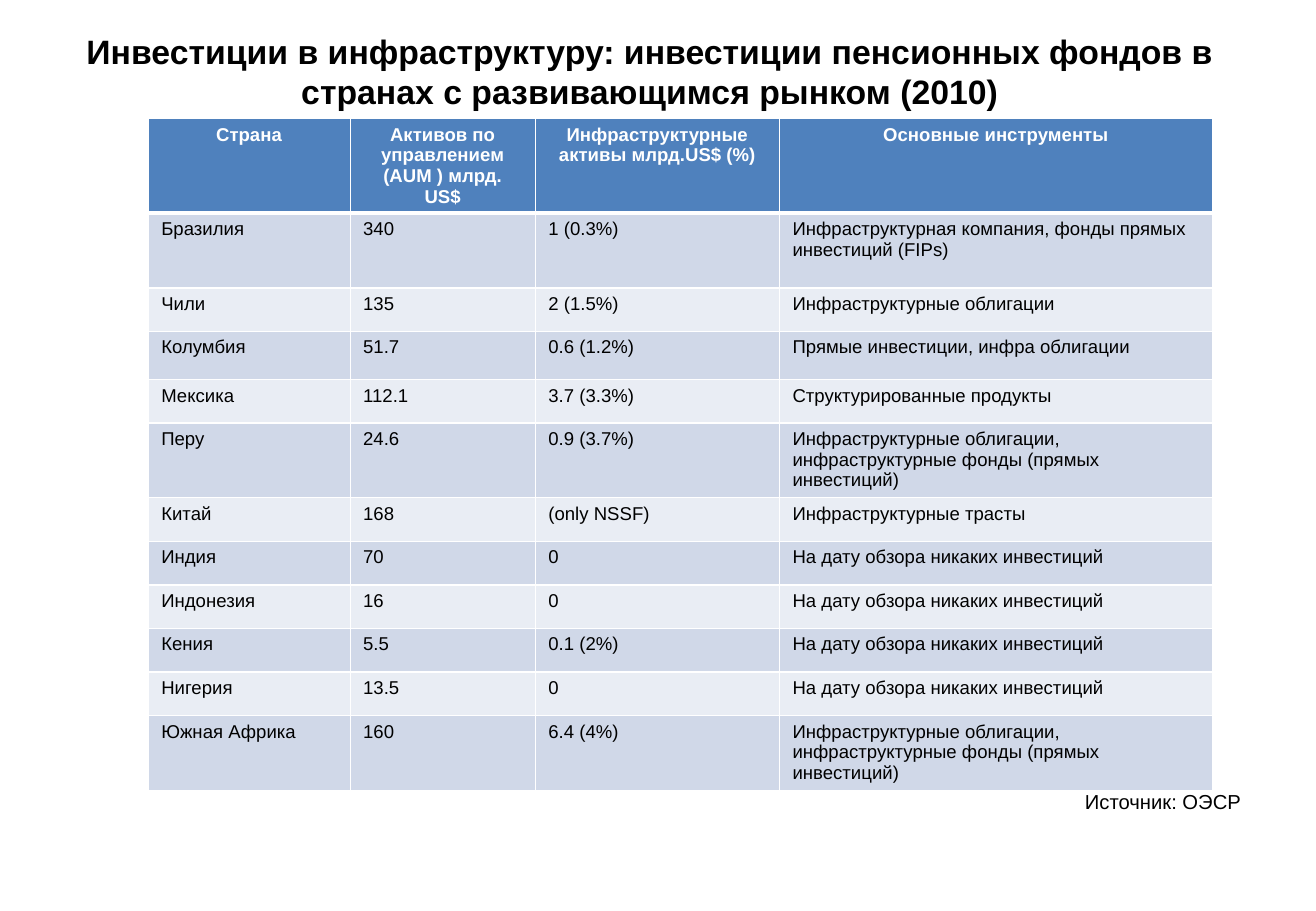
from dataclasses import dataclass
from lxml import etree
from pptx import Presentation
from pptx.dml.color import RGBColor
from pptx.enum.text import MSO_ANCHOR, PP_ALIGN
from pptx.oxml.ns import qn
from pptx.slide import Slide
from pptx.table import Table, _Cell
from pptx.text.text import TextFrame
from pptx.util import Pt

TOP = MSO_ANCHOR.TOP
LEFT = PP_ALIGN.LEFT
CENTER = PP_ALIGN.CENTER

BLACK = RGBColor(0x00, 0x00, 0x00)
WHITE = RGBColor(0xFF, 0xFF, 0xFF)
BLUE = RGBColor(0x4F, 0x81, 0xBD)
BANDS = (RGBColor(0xD0, 0xD8, 0xE8), RGBColor(0xE9, 0xED, 0xF4))

FONT = "Arial"
TITLE = (
    "Инвестиции в инфраструктуру: инвестиции пенсионных фондов "
    "в странах с развивающимся рынком (2010)"
)
SOURCE = "Источник: ОЭСР"
BONDS = "Инфраструктурные облигации, инфраструктурные фонды (прямых инвестиций)"
NONE = "На дату обзора никаких инвестиций"
LOW = 25.8
MID = 28.5
TALL = 44.4
HIGH = 55.8
WIDTHS = (119.7, 109.8, 144.7, 256.7)
EDGES = ("lnL", "lnR", "lnT", "lnB")


@dataclass
class Row:
    cells: tuple[str, str, str, str]
    height: float = LOW


@dataclass
class Style:
    size: float
    color: RGBColor = BLACK
    bold: bool = False
    align: PP_ALIGN = LEFT


HEAD = Style(11, WHITE, True, CENTER)
BODY = Style(11)

ROWS = [
    Row(
        (
            "Страна",
            "Активов по управлением (AUM ) млрд. US$",
            "Инфраструктурные активы млрд.US$ (%)",
            "Основные инструменты",
        ),
        HIGH,
    ),
    Row(
        (
            "Бразилия",
            "340",
            "1 (0.3%)",
            "Инфраструктурная компания, фонды прямых инвестиций (FIPs)",
        ),
        TALL,
    ),
    Row(("Чили", "135", "2 (1.5%)", "Инфраструктурные облигации")),
    Row(("Колумбия", "51.7", "0.6 (1.2%)", "Прямые инвестиции, инфра облигации"), MID),
    Row(("Мексика", "112.1", "3.7 (3.3%)", "Структурированные продукты")),
    Row(("Перу", "24.6", "0.9 (3.7%)", BONDS), TALL),
    Row(("Китай", "168", "(only NSSF)", "Инфраструктурные трасты")),
    Row(("Индия", "70", "0", NONE)),
    Row(("Индонезия", "16", "0", NONE)),
    Row(("Кения", "5.5", "0.1 (2%)", NONE)),
    Row(("Нигерия", "13.5", "0", NONE)),
    Row(("Южная Африка", "160", "6.4 (4%)", BONDS), TALL),
]


def write(frame: TextFrame, text: str, style: Style) -> None:
    frame.text = text
    frame.word_wrap = True
    line = frame.paragraphs[0]
    line.alignment = style.align
    font = line.runs[0].font
    font.name = FONT
    font.size = Pt(style.size)
    font.bold = style.bold
    font.color.rgb = style.color


def add_edge(cell: _Cell, edge: str, width: float) -> None:
    props = cell._tc.get_or_add_tcPr()
    line = etree.SubElement(props, qn(f"a:{edge}"), w=str(Pt(width)))
    fill = etree.SubElement(line, qn("a:solidFill"))
    etree.SubElement(fill, qn("a:srgbClr"), val=str(WHITE))


def fill_row(table: Table, index: int, row: Row) -> None:
    table.rows[index].height = Pt(row.height)
    for col, text in enumerate(row.cells):
        cell = table.cell(index, col)
        write(cell.text_frame, text, BODY if index else HEAD)
        cell.margin_left, cell.margin_right = Pt(7.6), Pt(8)
        cell.margin_top = cell.margin_bottom = Pt(3.5)
        for edge in EDGES:
            thick = (index, edge) in ((0, "lnB"), (1, "lnT"))
            add_edge(cell, edge, 3 if thick else 1)
        cell.fill.solid()
        cell.fill.fore_color.rgb = BANDS[(index - 1) % 2] if index else BLUE


def add_title(slide: Slide) -> None:
    title = slide.shapes.title
    title.left, title.top = Pt(18), Pt(18)
    title.width, title.height = Pt(734.4), Pt(72)
    frame = title.text_frame
    write(frame, TITLE, Style(20, bold=True, align=CENTER))
    frame.vertical_anchor = TOP
    frame.margin_left = frame.margin_right = 0
    frame.margin_top = frame.margin_bottom = 0


def add_funds(slide: Slide) -> None:
    height = sum(row.height for row in ROWS)
    table = slide.shapes.add_table(
        len(ROWS), len(WIDTHS), Pt(88), Pt(70.2), Pt(sum(WIDTHS)), Pt(height)
    ).table
    for col, width in zip(table.columns, WIDTHS):
        col.width = Pt(width)
    for index, row in enumerate(ROWS):
        fill_row(table, index, row)


def add_source(slide: Slide) -> None:
    box = slide.shapes.add_textbox(Pt(636), Pt(464.5), Pt(122.5), Pt(21.6))
    write(box.text_frame, SOURCE, Style(12))


def main() -> None:
    deck = Presentation()
    deck.slide_width, deck.slide_height = Pt(780), Pt(540)
    slide = deck.slides.add_slide(deck.slide_layouts[5])
    add_title(slide)
    add_funds(slide)
    add_source(slide)
    deck.save("out.pptx")


if __name__ == "__main__":
    main()
